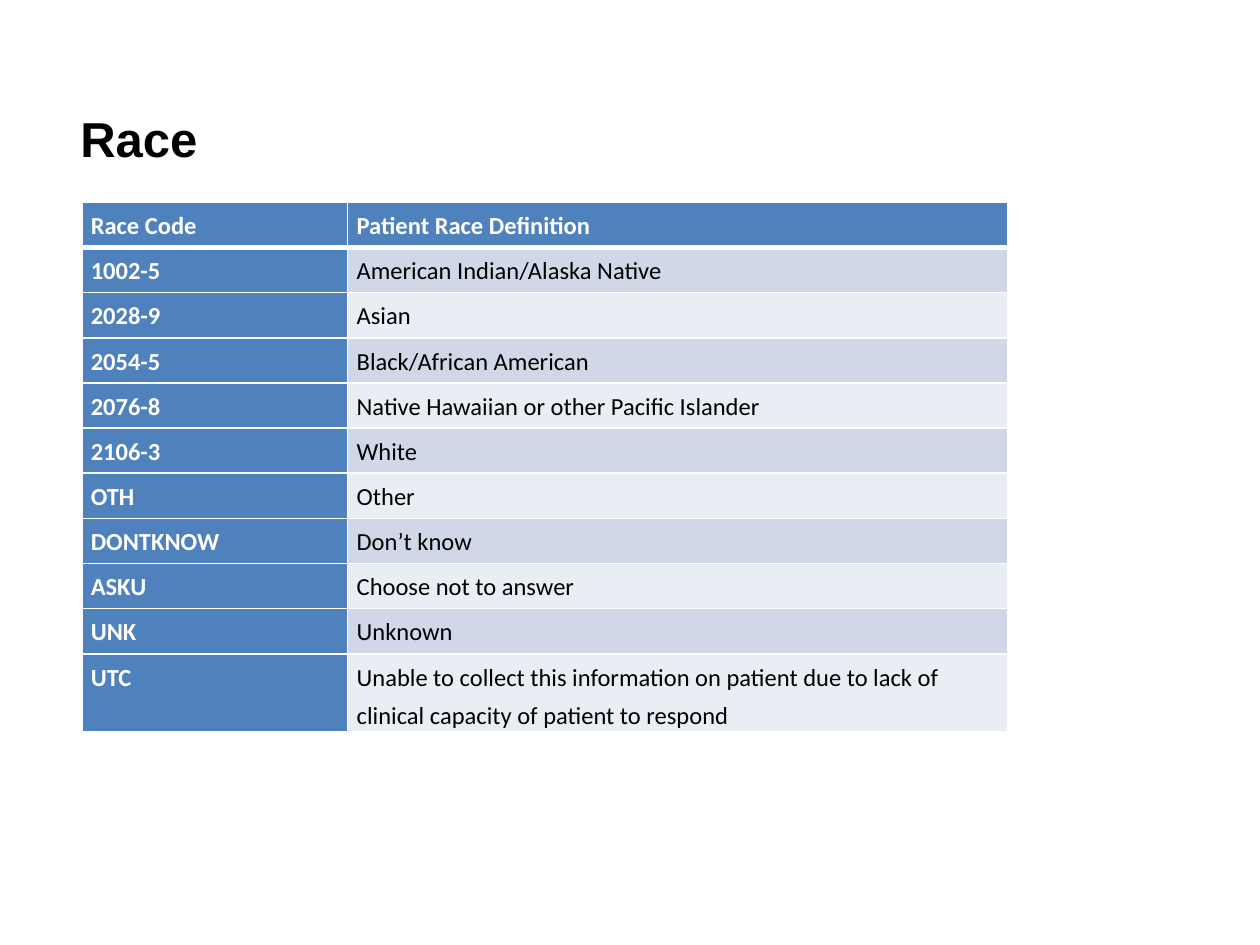
"""Build a slide that lists patient race codes and their definitions."""
from lxml.etree import SubElement
from pptx import Presentation
from pptx.dml.color import RGBColor
from pptx.enum.text import MSO_ANCHOR, PP_ALIGN
from pptx.oxml.ns import qn
from pptx.util import Cm, Pt

COLORS = {
    "text": "000000",
    "white": "FFFFFF",
    "header": "4F81BD",
    "odd_row": "D0D8E8",
    "even_row": "E9EDF4",
}
ROWS = [
    ("Race Code", "Patient Race Definition"),
    ("1002-5", "American Indian/Alaska Native"),
    ("2028-9", "Asian"),
    ("2054-5", "Black/African American"),
    ("2076-8", "Native Hawaiian or other Pacific Islander"),
    ("2106-3", "White"),
    ("OTH", "Other"),
    ("DONTKNOW", "Don’t know"),
    ("ASKU", "Choose not to answer"),
    ("UNK", "Unknown"),
    ("UTC", "Unable to collect this information on patient due to lack of "
            "clinical capacity of patient to respond"),
]
COLUMN_WIDTHS = (Cm(5.36), Cm(13.31))
ROW_HEIGHT = Cm(0.91)


def set_font(paragraph, name, size, color, bold):
    font = paragraph.font
    font.name, font.size, font.bold = name, Pt(size), bold
    font.color.rgb = RGBColor.from_string(COLORS[color])


def set_title(slide, text):
    title = slide.shapes.title
    title.left, title.top = Cm(0.64), Cm(0.97)
    title.width, title.height = Cm(22.33), Cm(2.49)
    frame = title.text_frame
    frame.text = text
    frame.vertical_anchor = MSO_ANCHOR.BOTTOM
    frame.margin_left, frame.margin_bottom = Cm(0.98), Cm(0.08)
    paragraph = frame.paragraphs[0]
    paragraph.alignment = PP_ALIGN.LEFT
    set_font(paragraph, "Arial", 28, "text", True)


def set_borders(cell, widths):
    properties = cell._tc.get_or_add_tcPr()
    for side, width in widths.items():
        line = SubElement(properties, qn(f"a:ln{side}"), w=str(Pt(width)))
        fill = SubElement(line, qn("a:solidFill"))
        SubElement(fill, qn("a:srgbClr"), val=COLORS["white"])


def format_cell(cell, text, row, column):
    is_heading = row == 0 or column == 0
    band = "odd_row" if row % 2 else "even_row"
    cell.margin_left = cell.margin_right = Cm(0.18)
    cell.margin_top = cell.margin_bottom = 0
    set_borders(cell, {"L": 1, "R": 1, "T": 3 if row == 1 else 1,
                       "B": 3 if row == 0 else 1})
    cell.fill.solid()
    cell.fill.fore_color.rgb = RGBColor.from_string(
        COLORS["header" if is_heading else band])
    cell.text = text
    paragraph = cell.text_frame.paragraphs[0]
    paragraph.line_spacing = 1.3
    paragraph.space_before = paragraph.space_after = Pt(3)
    set_font(paragraph, "Calibri", 14, "white" if is_heading else "text", is_heading)


def add_code_table(slide):
    frame = slide.shapes.add_table(
        len(ROWS), len(COLUMN_WIDTHS), Cm(1.65), Cm(4.08),
        sum(COLUMN_WIDTHS), ROW_HEIGHT * len(ROWS))
    table = frame.table
    table.first_col = True
    for column, width in zip(table.columns, COLUMN_WIDTHS):
        column.width = width
    for row, texts in enumerate(ROWS):
        table.rows[row].height = ROW_HEIGHT
        for column, text in enumerate(texts):
            format_cell(table.cell(row, column), text, row, column)


def main():
    presentation = Presentation()
    presentation.slide_width, presentation.slide_height = Cm(25.4), Cm(19.05)
    slide = presentation.slides.add_slide(presentation.slide_layouts[5])
    set_title(slide, "Race")
    add_code_table(slide)
    presentation.save("out.pptx")


if __name__ == "__main__":
    main()
